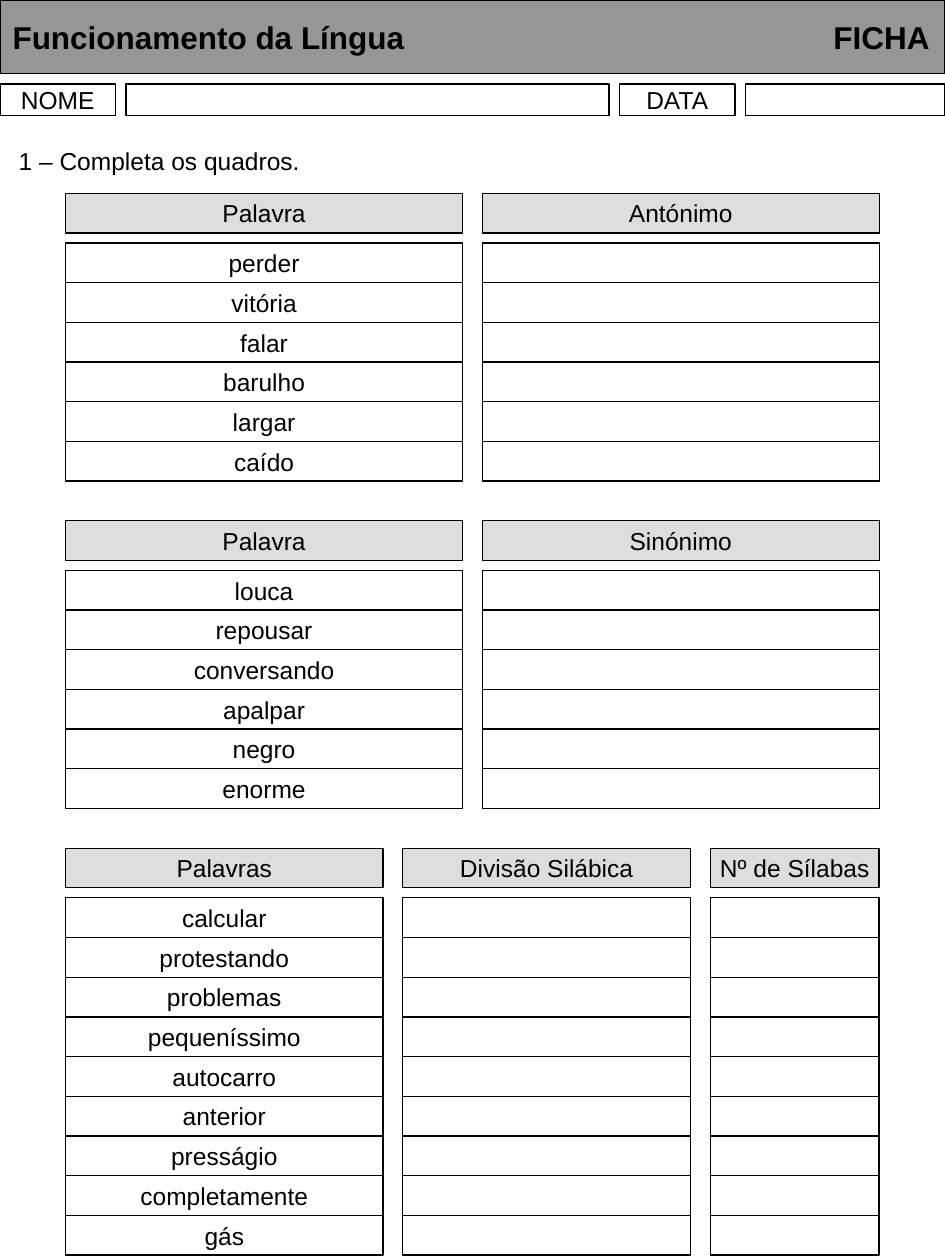
from dataclasses import dataclass

from lxml.etree import SubElement
from pptx import Presentation
from pptx.dml.color import RGBColor
from pptx.enum.shapes import MSO_SHAPE as Shape
from pptx.enum.text import MSO_ANCHOR as Anchor, MSO_AUTO_SIZE as AutoSize, PP_ALIGN as Align
from pptx.oxml.ns import qn
from pptx.util import Pt


@dataclass(frozen=True)
class Theme:
    ink: RGBColor = RGBColor(0x00, 0x00, 0x00)
    banner: RGBColor = RGBColor(0x96, 0x96, 0x96)
    heading: RGBColor = RGBColor(0xDD, 0xDD, 0xDD)
    font: str = "Arial"
    title_size: int = 18
    body_size: int = 14
    line_width: float = 0.75


theme = Theme()


def write(holder, text, size=theme.body_size, align=Align.LEFT, bold=False):
    """Put one formatted paragraph, centred vertically, into a shape."""
    frame = holder.text_frame
    frame.word_wrap = True
    frame.auto_size = AutoSize.NONE
    frame.vertical_anchor = Anchor.MIDDLE
    paragraph = frame.paragraphs[0]
    paragraph.text = text
    paragraph.alignment = align
    font = paragraph.font
    font.name, font.size, font.bold = theme.font, Pt(size), bold
    font.color.rgb = theme.ink
    return paragraph


def add_box(left, top, width, height, text="", fill=None):
    """Draw an outlined box with an optional centred text and fill."""
    box = slide.shapes.add_shape(Shape.RECTANGLE, Pt(left), Pt(top), Pt(width), Pt(height))
    box.shadow.inherit = False
    box.line.color.rgb = theme.ink
    box.line.width = Pt(theme.line_width)
    if fill is None:
        box.fill.background()
    else:
        box.fill.solid()
        box.fill.fore_color.rgb = fill
    if text:
        write(box, text, align=Align.CENTER)
        box.text_frame.margin_left = box.text_frame.margin_right = 0


prs = Presentation()
prs.slide_width, prs.slide_height = Pt(540), Pt(720)
slide = prs.slides.add_slide(prs.slide_layouts[5])

# Title banner, with the sheet label on a right tab
title = slide.shapes.title
title.left, title.top, title.width, title.height = Pt(0), Pt(0), Pt(540), Pt(42)
title.fill.solid()
title.fill.fore_color.rgb = theme.banner
title.line.color.rgb = theme.ink
title.line.width = Pt(theme.line_width)
heading = write(title, "Funcionamento da Língua\tFICHA", theme.title_size, bold=True)
properties = heading._p.get_or_add_pPr()
tabs = SubElement(properties, qn("a:tabLst"))
SubElement(tabs, qn("a:tab"), pos=str(Pt(524)), algn="r")
properties.insert(0, tabs)

# Name and date strip
left = 0
for label, width in (("NOME", 66), ("", 276), ("DATA", 66), ("", 114)):
    add_box(left, 48, width, 18, label)
    left += width + 6

# Instruction
instruction = slide.shapes.add_textbox(Pt(3.6), Pt(68.4), Pt(282), Pt(42))
write(instruction, "1 – Completa os quadros.").line_spacing = 1.3

# Exercise grids: (heading, width) of each column, then the given words
grids = (
    ((("Palavra", 226.8), ("Antónimo", 226.8)),
     ("perder", "vitória", "falar", "barulho", "largar", "caído")),
    ((("Palavra", 226.8), ("Sinónimo", 226.8)),
     ("louca", "repousar", "conversando", "apalpar", "negro", "enorme")),
    ((("Palavras", 181.4), ("Divisão Silábica", 164.4), ("Nº de Sílabas", 96.4)),
     ("calcular", "protestando", "problemas", "pequeníssimo", "autocarro",
      "anterior", "presságio", "completamente", "gás")),
)
GRID_LEFT, COLUMN_GAP = 37.5, 11.34
ROW_HEIGHT, HEADING_PITCH = 22.68, 28.35

top = 110.5
for columns, words in grids:
    left = GRID_LEFT
    first_row = top + HEADING_PITCH
    for column, (label, width) in enumerate(columns):
        add_box(left, top, width, ROW_HEIGHT, label, theme.heading)
        for row, word in enumerate(words):
            add_box(left, first_row + row * ROW_HEIGHT, width, ROW_HEIGHT,
                    word if column == 0 else "")
        left += width + COLUMN_GAP
    top = first_row + (len(words) + 1) * ROW_HEIGHT

prs.save("out.pptx")
